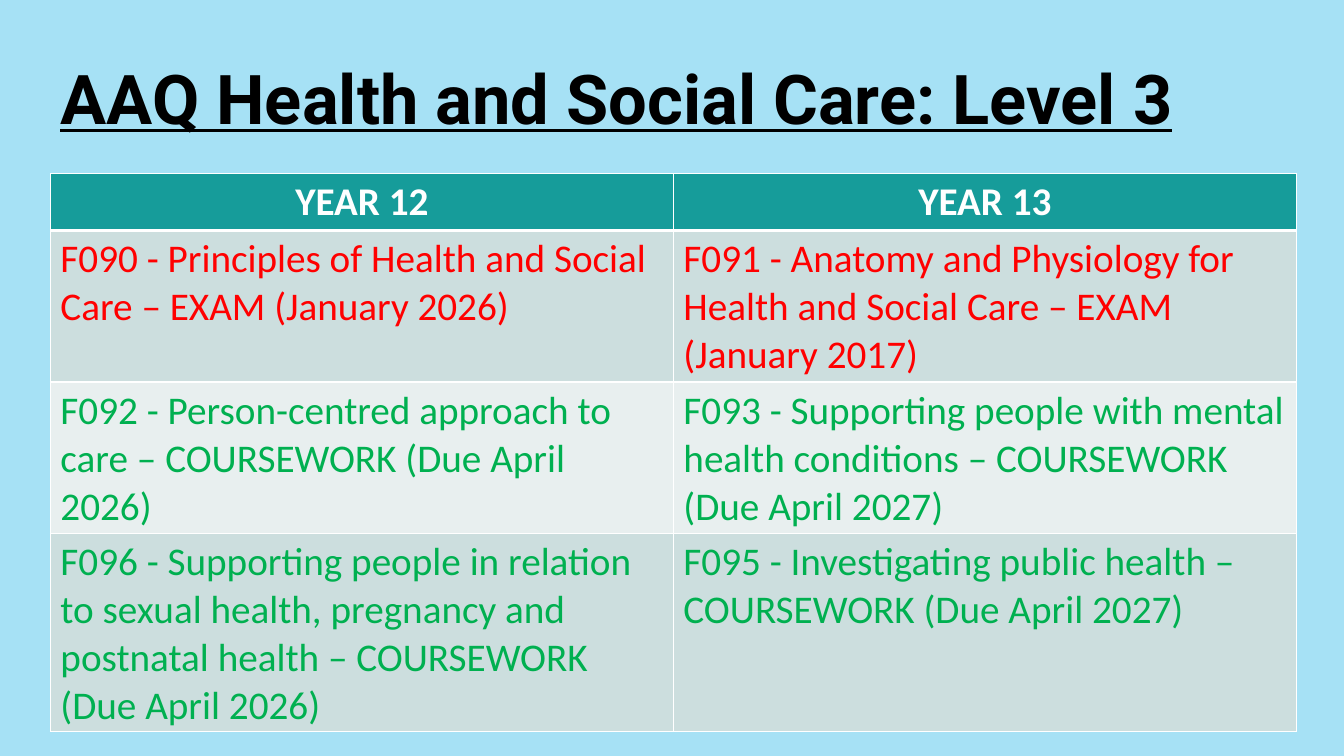
from lxml import etree
from pptx import Presentation
from pptx.dml.color import RGBColor
from pptx.enum.text import MSO_ANCHOR, MSO_AUTO_SIZE, PP_ALIGN
from pptx.oxml.ns import qn
from pptx.util import Cm, Pt

TOP = MSO_ANCHOR.TOP
GROW = MSO_AUTO_SIZE.SHAPE_TO_FIT_TEXT
LEFT = PP_ALIGN.LEFT
MID = PP_ALIGN.CENTER

WHITE = "FFFFFF"
EXAM = "FF0000"
COURSE = "00B050"
BANDS = ["CCDEDE", "E8EFEF"]

HEAD = ["YEAR 12", "YEAR 13"]
UNITS = [
    (EXAM, [
        "F090 - Principles of Health and Social Care – EXAM (January 2026)",
        "F091 - Anatomy and Physiology for Health and Social Care – EXAM (January 2017)",
    ]),
    (COURSE, [
        "F092 - Person-centred approach to care – COURSEWORK (Due April 2026)",
        "F093 - Supporting people with mental health conditions – COURSEWORK (Due April 2027)",
    ]),
    (COURSE, [
        "F096 - Supporting people in relation to sexual health, pregnancy and "
        "postnatal health – COURSEWORK (Due April 2026)",
        "F095 - Investigating public health – COURSEWORK (Due April 2027)",
    ]),
]


def color(code):
    return RGBColor.from_string(code)


class Sheet:
    def __init__(self, deck, back):
        self.slide = deck.slides.add_slide(deck.slide_layouts[5])
        self.font = "Calibri"
        self.size = 28
        fill = self.slide.background.fill
        fill.solid()
        fill.fore_color.rgb = color(back)

    def label(self, frame, text, ink, size, font, bold=False, line=False, align=LEFT):
        frame.text = text
        para = frame.paragraphs[0]
        para.alignment = align
        for run in para.runs:
            face = run.font
            face.name = font
            face.size = Pt(size)
            face.bold = bold
            face.underline = line
            face.color.rgb = color(ink)

    def title(self, text, left, top, width, height):
        box = self.slide.shapes.title
        box.left, box.top = Cm(left), Cm(top)
        box.width, box.height = Cm(width), Cm(height)
        frame = box.text_frame
        frame.word_wrap = True
        frame.auto_size = GROW
        frame.vertical_anchor = TOP
        self.label(frame, text, "000000", 49, "Roboto", bold=True, line=True)

    def border(self, cell, base):
        props = cell._tc.get_or_add_tcPr()
        sides = [("a:lnL", 1), ("a:lnR", 1), ("a:lnT", 1), ("a:lnB", base)]
        for spot, (tag, width) in enumerate(sides):
            edge = etree.Element(qn(tag), w=str(Pt(width)))
            fill = etree.SubElement(edge, qn("a:solidFill"))
            etree.SubElement(fill, qn("a:srgbClr"), val=WHITE)
            props.insert(spot, edge)

    def cell(self, cell, text, ink, fill, base=1, bold=False, align=LEFT):
        self.label(cell.text_frame, text, ink, self.size, self.font, bold, align=align)
        cell.fill.solid()
        cell.fill.fore_color.rgb = color(fill)
        self.border(cell, base)

    def table(self, head, units, left, top, width, first, rest):
        count = len(units)
        frame = self.slide.shapes.add_table(
            count + 1, len(head), Cm(left), Cm(top), Cm(width), Cm(first + count * rest))
        grid = frame.table
        for row in grid.rows:
            row.height = Cm(rest)
        grid.rows[0].height = Cm(first)
        for col, text in enumerate(head):
            self.cell(grid.cell(0, col), text, WHITE, "169C9A", 3, True, MID)
        for row, (ink, texts) in enumerate(units):
            for col, text in enumerate(texts):
                self.cell(grid.cell(row + 1, col), text, ink, BANDS[row % 2])


def main():
    deck = Presentation()
    deck.slide_width, deck.slide_height = Cm(33.87), Cm(19.05)
    sheet = Sheet(deck, "A6E1F5")
    sheet.title("AAQ Health and Social Care: Level 3", 1.27, 1.27, 32.26, 1.32)
    sheet.table(HEAD, UNITS, 1.27, 4.37, 31.4, 1.2, 3.28)
    deck.save("out.pptx")


if __name__ == "__main__":
    main()
